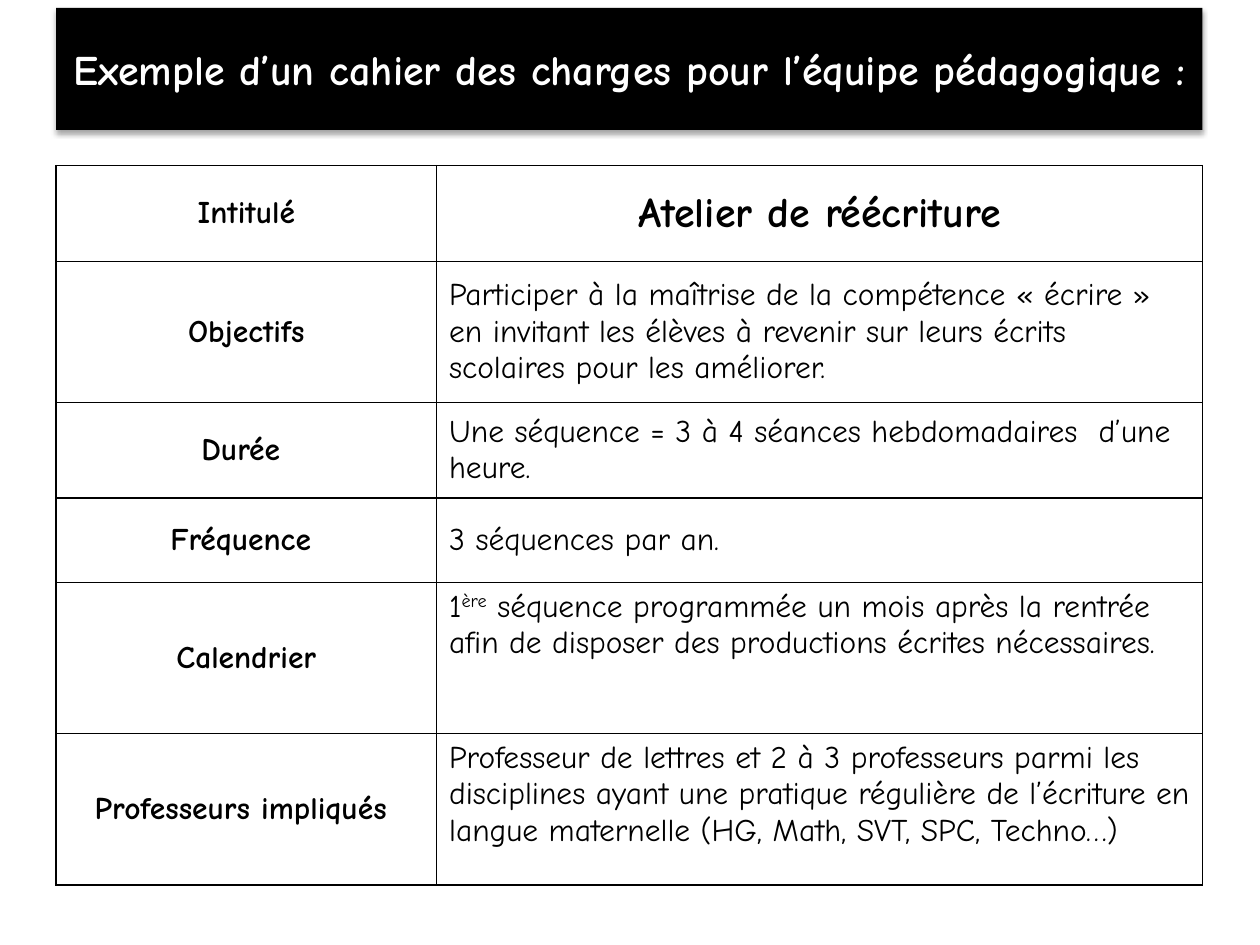
import lxml.etree
import pptx
import pptx.dml.color
import pptx.enum.shapes
import pptx.enum.text
import pptx.oxml
import pptx.oxml.ns
import pptx.util

Cm = pptx.util.Cm
Pt = pptx.util.Pt
Align = pptx.enum.text.PP_ALIGN
Anchor = pptx.enum.text.MSO_ANCHOR
qn = pptx.oxml.ns.qn

BLACK = pptx.dml.color.RGBColor(0x00, 0x00, 0x00)
WHITE = pptx.dml.color.RGBColor(0xFF, 0xFF, 0xFF)
FONT = "Comic Neue"
NAMESPACE = 'xmlns:a="http://schemas.openxmlformats.org/drawingml/2006/main"'

COLUMN_WIDTHS = [7.67, 15.44]
ROW_HEIGHTS = [1.93, 2.84, 1.93, 1.7, 3.05, 3.05]
ROWS = [
    ("Intitulé", ["Atelier de réécriture"]),
    ("Objectifs", ["Participer à la maîtrise de la compétence « écrire » en invitant "
                   "les élèves à revenir sur leurs écrits scolaires pour les améliorer."]),
    ("Durée ", ["Une séquence = 3 à 4 séances hebdomadaires  d’une heure."]),
    ("Fréquence ", ["3 séquences par an."]),
    ("Calendrier", ["1", "ère", " séquence programmée un mois après la rentrée afin de "
                    "disposer des productions écrites nécessaires."]),
    ("Professeurs impliqués ", ["Professeur de lettres et 2 à 3 professeurs parmi les "
                                "disciplines ayant une pratique régulière de l’écriture en "
                                "langue maternelle (HG, Math, SVT, SPC, Techno…)"]),
]
TOP_ANCHORED_FROM = 4


def add_text(para, text, size=18, bold=False, color=BLACK, raised=False):
    span = para.add_run()
    span.text = text
    span.font.name = FONT
    span.font.size = Pt(size)
    span.font.bold = bold
    span.font.color.rgb = color
    if raised:
        span.font._element.set("baseline", "30000")


def add_shadow(shape):
    shape.shadow.inherit = False
    effects = shape._element.spPr.find(qn("a:effectLst"))
    effects.append(pptx.oxml.parse_xml(
        f'<a:outerShdw {NAMESPACE} blurRad="{Pt(3.1)}" dist="{Pt(1.8)}" dir="5400000" '
        f'rotWithShape="0"><a:srgbClr val="{BLACK}"><a:alpha val="35000"/></a:srgbClr>'
        '</a:outerShdw>'))


def add_borders(cell):
    properties = cell._tc.get_or_add_tcPr()
    for index, side in enumerate(("lnL", "lnR", "lnT", "lnB")):
        properties.insert(index, pptx.oxml.parse_xml(
            f'<a:{side} {NAMESPACE} w="{Pt(1)}"><a:solidFill><a:srgbClr val="{BLACK}"/>'
            f'</a:solidFill></a:{side}>'))


def add_banner(page, left, top, width, height):
    box = page.shapes.add_shape(pptx.enum.shapes.MSO_SHAPE.RECTANGLE, left, top, width, height)
    box.fill.solid()
    box.fill.fore_color.rgb = BLACK
    box.line.fill.background()
    add_shadow(box)
    box.text_frame.word_wrap = True
    box.text_frame.vertical_anchor = Anchor.MIDDLE
    para = box.text_frame.paragraphs[0]
    para.alignment = Align.CENTER
    add_text(para, "Exemple d’un cahier des charges pour l’équipe pédagogique : ",
             size=24, bold=True, color=WHITE)


def fill_cell(cell, parts, anchor=Anchor.MIDDLE, align=Align.LEFT, **style):
    cell.fill.solid()
    cell.fill.fore_color.rgb = WHITE
    add_borders(cell)
    cell.vertical_anchor = anchor
    para = cell.text_frame.paragraphs[0]
    para.alignment = align
    for part in parts:
        add_text(para, part, raised=part == "ère", **style)


def add_specification(page, left, top, width, height):
    table = page.shapes.add_table(len(ROWS), 2, left, top, width, height).table
    table.first_row = False
    table.horz_banding = False
    for column, column_width in zip(table.columns, COLUMN_WIDTHS):
        column.width = Cm(column_width)
    for index, (label, parts) in enumerate(ROWS):
        table.rows[index].height = Cm(ROW_HEIGHTS[index])
        fill_cell(table.cell(index, 0), [label], align=Align.CENTER, bold=True)
        if index == 0:
            fill_cell(table.cell(index, 1), parts, align=Align.CENTER, size=24, bold=True)
        else:
            anchor = Anchor.TOP if index >= TOP_ANCHORED_FROM else Anchor.MIDDLE
            fill_cell(table.cell(index, 1), parts, anchor=anchor)


def main():
    deck = pptx.Presentation()
    deck.slide_width = Cm(25.4)
    deck.slide_height = Cm(19.05)
    page = deck.slides.add_slide(deck.slide_layouts[6])
    add_banner(page, Cm(1.13), Cm(0.16), Cm(23.11), Cm(2.46))
    add_specification(page, Cm(1.13), Cm(3.34), Cm(sum(COLUMN_WIDTHS)), Cm(sum(ROW_HEIGHTS)))
    deck.save("out.pptx")


if __name__ == "__main__":
    main()
